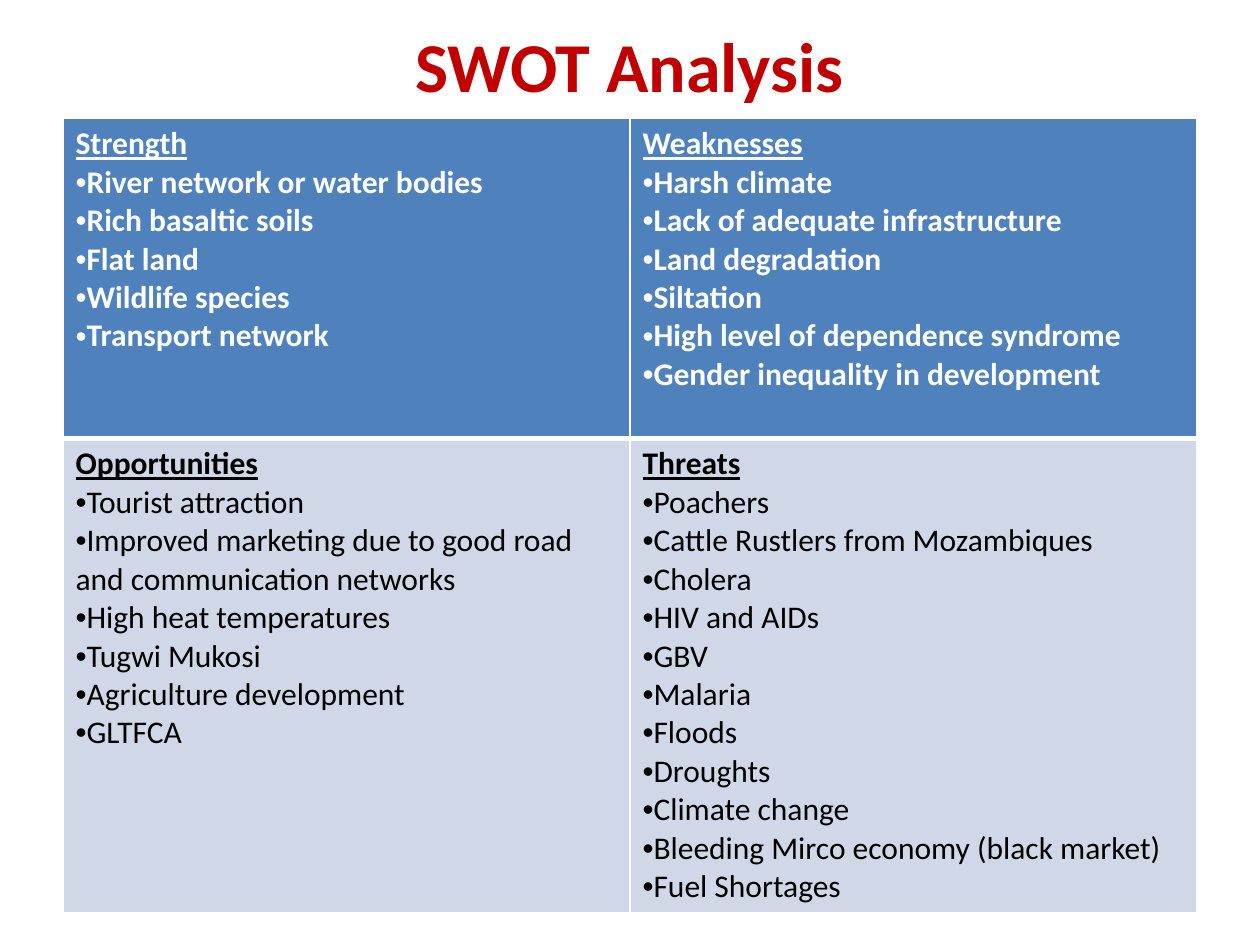
from dataclasses import dataclass

from lxml.etree import SubElement
from pptx import Presentation
from pptx.dml.color import RGBColor
from pptx.enum.text import MSO_ANCHOR, PP_ALIGN
from pptx.oxml.ns import qn
from pptx.util import Inches, Pt

FONT = "Calibri"
RED = RGBColor(0xC0, 0x00, 0x00)
BLUE = RGBColor(0x4F, 0x81, 0xBD)
PALE_BLUE = RGBColor(0xD0, 0xD8, 0xE8)
WHITE = RGBColor(0xFF, 0xFF, 0xFF)
BLACK = RGBColor(0x00, 0x00, 0x00)

SLIDE_WIDTH, SLIDE_HEIGHT = Inches(10), Inches(7.5)
MARGIN = Inches(0.5)
TABLE_TOP = Inches(0.94)
ROW_HEIGHTS = (Inches(2.54), Inches(3.76))
THIN, THICK = Pt(1), Pt(3)


@dataclass(frozen=True)
class Quadrant:
    heading: str
    points: tuple[str, ...]


@dataclass(frozen=True)
class RowStyle:
    fill: RGBColor
    text: RGBColor
    bold_points: bool
    top_border: int
    bottom_border: int


GRID = (
    (
        Quadrant("Strength", (
            "River network or water bodies", "Rich basaltic soils", "Flat land",
            "Wildlife species", "Transport network")),
        Quadrant("Weaknesses", (
            "Harsh climate", "Lack of adequate infrastructure", "Land degradation",
            "Siltation", "High level of dependence syndrome",
            "Gender inequality in development")),
    ),
    (
        Quadrant("Opportunities", (
            "Tourist attraction",
            "Improved marketing due to good road and communication networks",
            "High heat temperatures", "Tugwi Mukosi", "Agriculture development",
            "GLTFCA")),
        Quadrant("Threats", (
            "Poachers", "Cattle Rustlers from Mozambiques", "Cholera",
            "HIV and AIDs", "GBV", "Malaria", "Floods", "Droughts",
            "Climate change", "Bleeding Mirco economy (black market)",
            "Fuel Shortages")),
    ),
)
ROW_STYLES = (
    RowStyle(BLUE, WHITE, True, THIN, THICK),
    RowStyle(PALE_BLUE, BLACK, False, THICK, THIN),
)


def add_run(paragraph, text: str, size: float, color: RGBColor,
            bold: bool, underline: bool = False) -> None:
    run = paragraph.add_run()
    run.text = text
    run.font.name = FONT
    run.font.size = Pt(size)
    run.font.color.rgb = color
    run.font.bold = bold
    run.font.underline = underline


def add_bullet(paragraph) -> None:
    properties = paragraph._p.get_or_add_pPr()
    properties.set("marL", "0")
    properties.set("indent", "0")
    SubElement(properties, qn("a:buFont"), typeface="Arial")
    SubElement(properties, qn("a:buChar"), char="•")


def set_borders(cell, style: RowStyle) -> None:
    properties = cell._tc.get_or_add_tcPr()
    widths = {"L": THIN, "R": THIN, "T": style.top_border, "B": style.bottom_border}
    for side, width in widths.items():
        line = SubElement(properties, qn(f"a:ln{side}"), w=str(int(width)))
        fill = SubElement(line, qn("a:solidFill"))
        SubElement(fill, qn("a:srgbClr"), val=str(WHITE))


def fill_cell(cell, quadrant: Quadrant, style: RowStyle) -> None:
    set_borders(cell, style)
    cell.fill.solid()
    cell.fill.fore_color.rgb = style.fill
    frame = cell.text_frame
    add_run(frame.paragraphs[0], quadrant.heading, 18, style.text, True, True)
    for point in quadrant.points:
        paragraph = frame.add_paragraph()
        add_bullet(paragraph)
        add_run(paragraph, point, 18, style.text, style.bold_points)


def add_title(slide, text: str) -> None:
    title = slide.shapes.title
    title.left, title.top = Inches(0.23), 0
    title.width, title.height = Inches(9.53), Inches(1.02)
    frame = title.text_frame
    frame.vertical_anchor = MSO_ANCHOR.MIDDLE
    paragraph = frame.paragraphs[0]
    paragraph.alignment = PP_ALIGN.CENTER
    add_run(paragraph, text, 40, RED, True)


def add_swot_table(slide) -> None:
    table = slide.shapes.add_table(
        len(GRID), len(GRID[0]), MARGIN, TABLE_TOP,
        SLIDE_WIDTH - 2 * MARGIN, sum(ROW_HEIGHTS)).table
    table.horz_banding = False
    for row_index, (quadrants, style) in enumerate(zip(GRID, ROW_STYLES)):
        table.rows[row_index].height = ROW_HEIGHTS[row_index]
        for column_index, quadrant in enumerate(quadrants):
            fill_cell(table.cell(row_index, column_index), quadrant, style)


def main() -> None:
    presentation = Presentation()
    presentation.slide_width = SLIDE_WIDTH
    presentation.slide_height = SLIDE_HEIGHT
    # Title Only layout
    slide = presentation.slides.add_slide(presentation.slide_layouts[5])
    add_swot_table(slide)
    add_title(slide, "SWOT Analysis")
    presentation.save("out.pptx")


if __name__ == "__main__":
    main()
